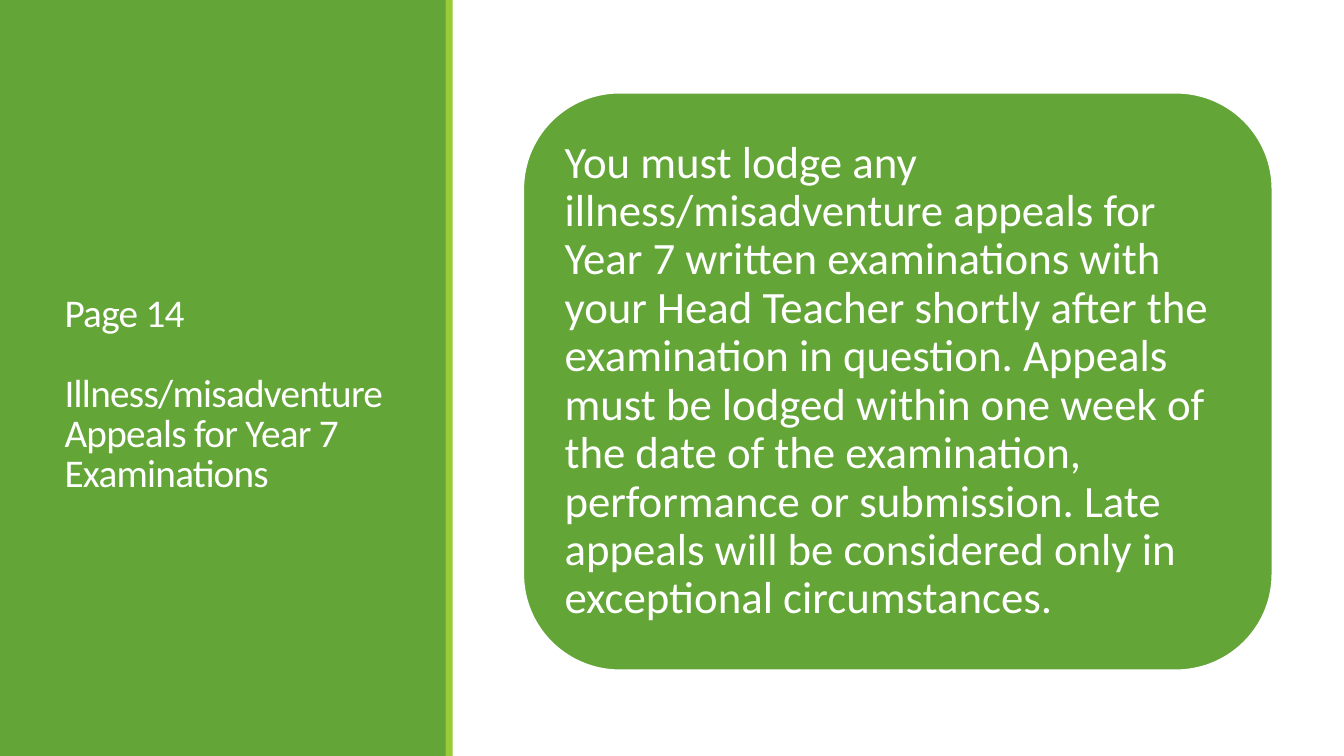
"""Build the slide on illness and misadventure appeals for Year 7."""
import dataclasses

import pptx
import pptx.dml.color
import pptx.enum.shapes
import pptx.enum.text
import pptx.util

Inches = pptx.util.Inches
Shape = pptx.enum.shapes.MSO_SHAPE


@dataclasses.dataclass(frozen=True)
class Theme:
    green: str = "63A537"
    lime: str = "99CB38"
    white: str = "FFFFFF"
    font: str = "Calibri"
    title_size: int = 28
    body_size: int = 32


class SlideBuilder:
    def __init__(self, slide, theme):
        self.slide = slide
        self.theme = theme

    def color(self, value):
        return pptx.dml.color.RGBColor.from_string(value)

    def shape(self, kind, left, top, width, height, fill):
        box = self.slide.shapes.add_shape(
            kind, Inches(left), Inches(top), Inches(width), Inches(height))
        box.shadow.inherit = False
        box.fill.solid()
        box.fill.fore_color.rgb = self.color(fill)
        box.line.fill.background()
        return box

    def set_text(self, box, lines, size, line_spacing):
        frame = box.text_frame
        frame.text = "\n".join(lines)
        frame.word_wrap = True
        frame.auto_size = pptx.enum.text.MSO_AUTO_SIZE.NONE
        frame.vertical_anchor = pptx.enum.text.MSO_ANCHOR.MIDDLE
        for para in frame.paragraphs:
            para.alignment = pptx.enum.text.PP_ALIGN.LEFT
            para.line_spacing = line_spacing
            for span in para.runs:
                span.font.name = self.theme.font
                span.font.size = pptx.util.Pt(size)
                span.font.color.rgb = self.color(self.theme.white)
        return frame

    def title(self, lines, left, top, width, height):
        box = self.slide.shapes.title
        box.left, box.top = Inches(left), Inches(top)
        box.width, box.height = Inches(width), Inches(height)
        frame = self.set_text(box, lines, self.theme.title_size, 0.85)
        frame.margin_top = Inches(0.45)
        frame.paragraphs[-1].space_before = pptx.util.Pt(29)
        for para in frame.paragraphs:
            for span in para.runs:
                span.font._element.set("spc", "-50")
        self.slide.shapes._spTree.append(box._element)

    def card(self, text, left, top, width, height):
        box = self.shape(Shape.ROUNDED_RECTANGLE, left, top, width, height,
                         self.theme.green)
        box.line.color.rgb = self.color(self.theme.white)
        box.line.width = pptx.util.Pt(1.25)
        frame = self.set_text(box, [text], self.theme.body_size, 0.9)
        frame.margin_left = frame.margin_right = Inches(0.13)
        frame.margin_top = frame.margin_bottom = Inches(0.13)


def main():
    theme = Theme()
    deck = pptx.Presentation()
    deck.slide_width, deck.slide_height = Inches(13.33), Inches(7.5)
    page = SlideBuilder(deck.slides.add_slide(deck.slide_layouts[5]), theme)
    page.shape(Shape.RECTANGLE, 0, 0, 4.43, 7.5, theme.green)
    page.shape(Shape.RECTANGLE, 4.42, 0, 0.07, 7.5, theme.lime)
    page.title(
        ["Page 14", "Illness/misadventure Appeals for Year 7 Examinations"],
        0.54, 0.57, 3.37, 6.31)
    page.card(
        "You must lodge any illness/misadventure appeals for Year 7 written "
        "examinations with your Head Teacher shortly after the examination "
        "in question. Appeals must be lodged within one week of the date of "
        "the examination, performance or submission. Late appeals will be "
        "considered only in exceptional circumstances.",
        5.19, 0.92, 7.43, 5.73)
    deck.save("out.pptx")


if __name__ == "__main__":
    main()
